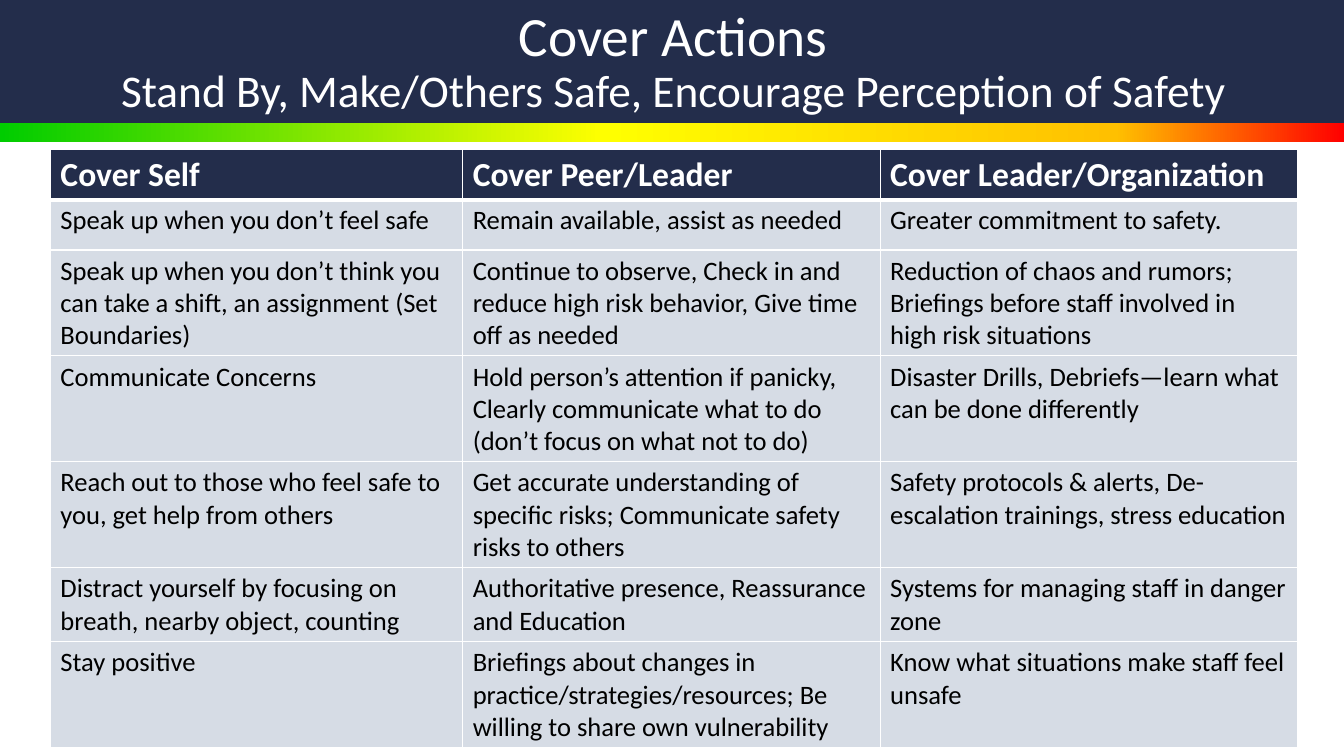
from lxml.etree import SubElement
from pptx import Presentation
from pptx.dml.color import RGBColor
from pptx.enum.shapes import MSO_SHAPE as Shape
from pptx.enum.text import MSO_ANCHOR as Anchor, PP_ALIGN as Align
from pptx.oxml.ns import qn
from pptx.util import Cm, Pt

FONT = "Calibri"
COLORS = {"navy": "232D4B", "pale": "D6DCE5", "white": "FFFFFF", "black": "000000"}
RISK_STOPS = [(0, "00CC00"), (45, "FFFF00"), (83, "FFC000"), (100, "FF0000")]

TITLE = [
    ("Cover Actions", 39.6),
    ("Stand By, Make/Others Safe, Encourage Perception of Safety", 32.4),
]
ACTIONS = [
    ("Cover Self", "Cover Peer/Leader", "Cover Leader/Organization"),
    ("Speak up when you don’t feel safe",
     "Remain available, assist as needed",
     "Greater commitment to safety."),
    ("Speak up when you don’t think you can take a shift, an assignment (Set Boundaries)",
     "Continue to observe, Check in and reduce high risk behavior, Give time off as needed",
     "Reduction of chaos and rumors; Briefings before staff involved in high risk situations"),
    ("Communicate Concerns",
     "Hold person’s attention if panicky, Clearly communicate what to do "
     "(don’t focus on what not to do)",
     "Disaster Drills, Debriefs—learn what can be done differently"),
    ("Reach out to those who feel safe to you, get help from others",
     "Get accurate understanding of specific risks; Communicate safety risks to others",
     "Safety protocols & alerts, De-escalation trainings, stress education"),
    ("Distract yourself by focusing on breath, nearby object, counting",
     "Authoritative presence, Reassurance and Education",
     "Systems for managing staff in danger zone"),
    ("Stay positive",
     "Briefings about changes in practice/strategies/resources; "
     "Be willing to share own vulnerability",
     "Know what situations make staff feel unsafe"),
]
COLUMN_WIDTHS = [10.39, 10.52, 10.52]
ROW_HEIGHTS = [1.19, 1.27, 2.46, 1.35, 2.13, 1.35, 1.35]
SLIDE_WIDTH, SLIDE_HEIGHT = 33.87, 19.05
BANNER_HEIGHT, STRIPE_HEIGHT = 3.1, 0.48


def rgb(name):
    return RGBColor.from_string(COLORS[name])


def add_text(para, text, size, color="black", bold=False):
    span = para.add_run()
    span.text = text
    span.font.name = FONT
    span.font.size = Pt(size)
    span.font.bold = bold
    span.font.color.rgb = rgb(color)


def add_bar(page, top, height):
    bar = page.shapes.add_shape(
        Shape.RECTANGLE, 0, Cm(top), Cm(SLIDE_WIDTH), Cm(height))
    bar.shadow.inherit = False
    bar.line.fill.background()
    return bar


def fill_gradient(shape, stops):
    """Fill left to right with (percent, hex color) stops."""
    shape.fill.gradient()
    shape.fill.gradient_angle = 0
    stop_list = shape.fill._fill._gradFill.find(qn("a:gsLst"))
    for old_stop in list(stop_list):
        stop_list.remove(old_stop)
    for percent, color in stops:
        stop = SubElement(stop_list, qn("a:gs"), pos=str(percent * 1000))
        SubElement(stop, qn("a:srgbClr"), val=color)


def set_borders(cell, **widths):
    """Draw white borders; the keywords are the sides lnL, lnR, lnT and lnB in points."""
    properties = cell._tc.get_or_add_tcPr()
    for index, (side, width) in enumerate(widths.items()):
        line = SubElement(properties, qn(f"a:{side}"), w=str(Pt(width)))
        fill = SubElement(line, qn("a:solidFill"))
        SubElement(fill, qn("a:srgbClr"), val=COLORS["white"])
        properties.insert(index, line)


def add_title(page):
    box = page.shapes.add_textbox(Cm(2.39), Cm(0.2), Cm(29.16), Cm(2.79))
    frame = box.text_frame
    frame.word_wrap = True
    frame.vertical_anchor = Anchor.MIDDLE
    para = frame.paragraphs[0]
    para.alignment = Align.CENTER
    para.line_spacing = 0.9
    for index, (text, size) in enumerate(TITLE):
        if index:
            para.add_line_break()
        add_text(para, text, size, color="white")


def add_actions(page):
    table = page.shapes.add_table(
        len(ACTIONS), len(COLUMN_WIDTHS), Cm(1.27), Cm(3.76),
        Cm(sum(COLUMN_WIDTHS)), Cm(sum(ROW_HEIGHTS))).table
    table.horz_banding = False
    for column, width in zip(table.columns, COLUMN_WIDTHS):
        column.width = Cm(width)
    for index, (row, height, texts) in enumerate(zip(table.rows, ROW_HEIGHTS, ACTIONS)):
        row.height = Cm(height)
        header = index == 0
        for cell, text in zip(row.cells, texts):
            cell.fill.solid()
            cell.fill.fore_color.rgb = rgb("navy" if header else "pale")
            set_borders(cell, lnL=1, lnR=1, lnT=3 if index == 1 else 1,
                        lnB=3 if header else 1)
            add_text(cell.text_frame.paragraphs[0], text, 24 if header else 19,
                     color="white" if header else "black", bold=header)


def main():
    deck = Presentation()
    deck.slide_width, deck.slide_height = Cm(SLIDE_WIDTH), Cm(SLIDE_HEIGHT)
    page = deck.slides.add_slide(deck.slide_layouts[6])
    fill_gradient(add_bar(page, BANNER_HEIGHT, STRIPE_HEIGHT), RISK_STOPS)
    banner = add_bar(page, 0, BANNER_HEIGHT)
    banner.fill.solid()
    banner.fill.fore_color.rgb = rgb("navy")
    add_title(page)
    add_actions(page)
    deck.save("out.pptx")


if __name__ == "__main__":
    main()
